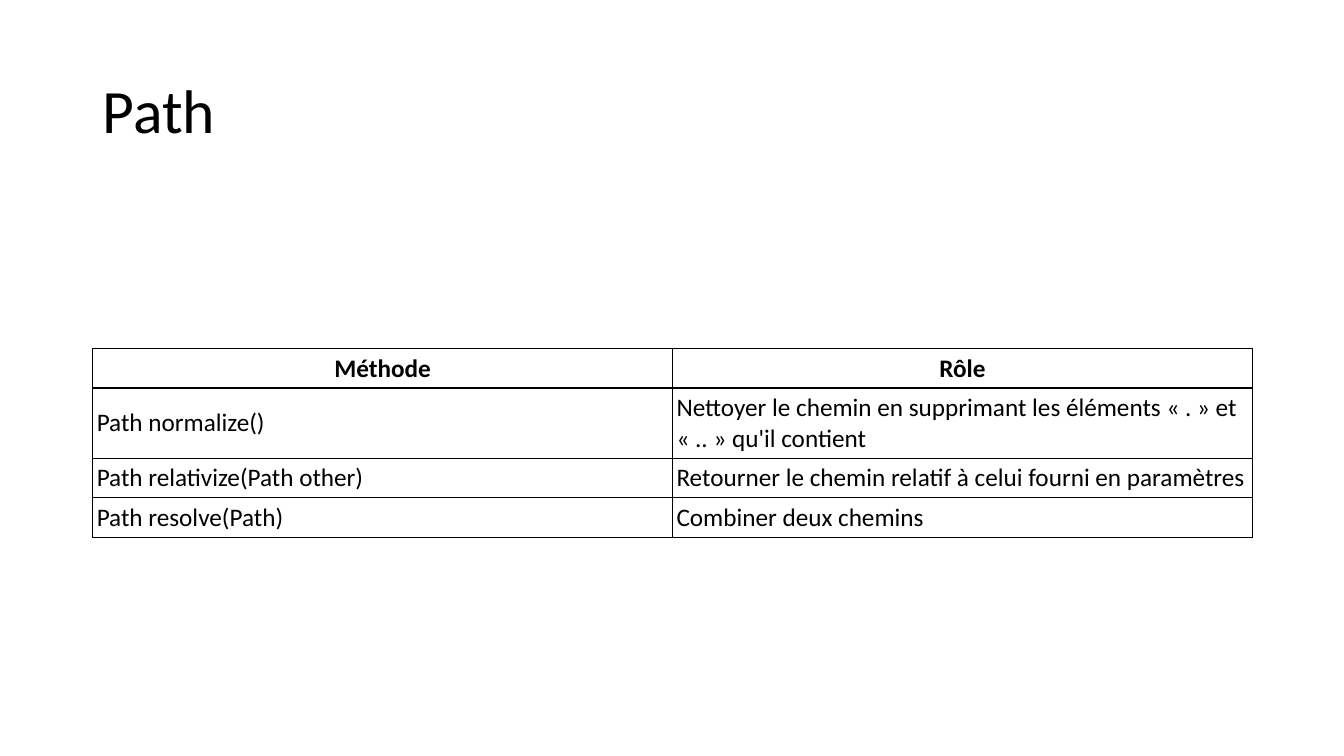
from lxml import etree
from pptx import Presentation
from pptx.dml.color import RGBColor
from pptx.enum import text
from pptx.oxml import ns
from pptx.util import Inches, Pt

BLACK = "000000"
ROWS = [
    ("Méthode", "Rôle"),
    ("Path normalize()", "Nettoyer le chemin en supprimant les éléments « . » et « .. » qu'il contient"),
    ("Path relativize(Path other)", "Retourner le chemin relatif à celui fourni en paramètres"),
    ("Path resolve(Path)", "Combiner deux chemins"),
]
ROW_HEIGHTS = [0.39, 0.7, 0.39, 0.39]


def color(value):
    return RGBColor.from_string(value)


def write(tf, content, size=18, bold=False, align=text.PP_ALIGN.LEFT, spacing=None):
    tf.word_wrap = True
    p = tf.paragraphs[0]
    p.alignment = align
    p.line_spacing = spacing
    r = p.add_run()
    r.text = content
    r.font.name = "Calibri"
    r.font.size = Pt(size)
    r.font.bold = bold
    r.font.color.rgb = color(BLACK)


def add_title(s, content):
    sp = s.shapes.add_textbox(Inches(0.92), Inches(0.4), Inches(11.5), Inches(1.45))
    sp.text_frame.vertical_anchor = text.MSO_ANCHOR.MIDDLE
    write(sp.text_frame, content, size=44, spacing=0.9)


def add_borders(cell, value, width):
    tc_pr = cell._tc.get_or_add_tcPr()
    for side in ("a:lnL", "a:lnR", "a:lnT", "a:lnB"):
        ln = etree.SubElement(tc_pr, ns.qn(side), w=str(Pt(width)))
        fill = etree.SubElement(ln, ns.qn("a:solidFill"))
        etree.SubElement(fill, ns.qn("a:srgbClr"), val=value)


def format_cell(cell):
    cell.margin_left = cell.margin_right = Inches(0.04)
    cell.margin_top = cell.margin_bottom = Inches(0.04)
    cell.vertical_anchor = text.MSO_ANCHOR.MIDDLE
    add_borders(cell, BLACK, 1)
    cell.fill.background()


def add_method_table(s, rows, heights):
    table = s.shapes.add_table(
        len(rows), len(rows[0]), Inches(0.92), Inches(3.46), Inches(11.5), Inches(sum(heights))
    ).table
    table.horz_banding = False
    table.first_row = False
    for i, (row, height) in enumerate(zip(rows, heights)):
        table.rows[i].height = Inches(height)
        header = i == 0
        align = text.PP_ALIGN.CENTER if header else text.PP_ALIGN.LEFT
        for j, content in enumerate(row):
            cell = table.cell(i, j)
            format_cell(cell)
            write(cell.text_frame, content, bold=header, align=align)


def main():
    prs = Presentation()
    prs.slide_width = Inches(13.33)
    prs.slide_height = Inches(7.5)
    s = prs.slides.add_slide(prs.slide_layouts[6])
    add_title(s, "Path")
    add_method_table(s, ROWS, ROW_HEIGHTS)
    prs.save("out.pptx")


if __name__ == "__main__":
    main()
